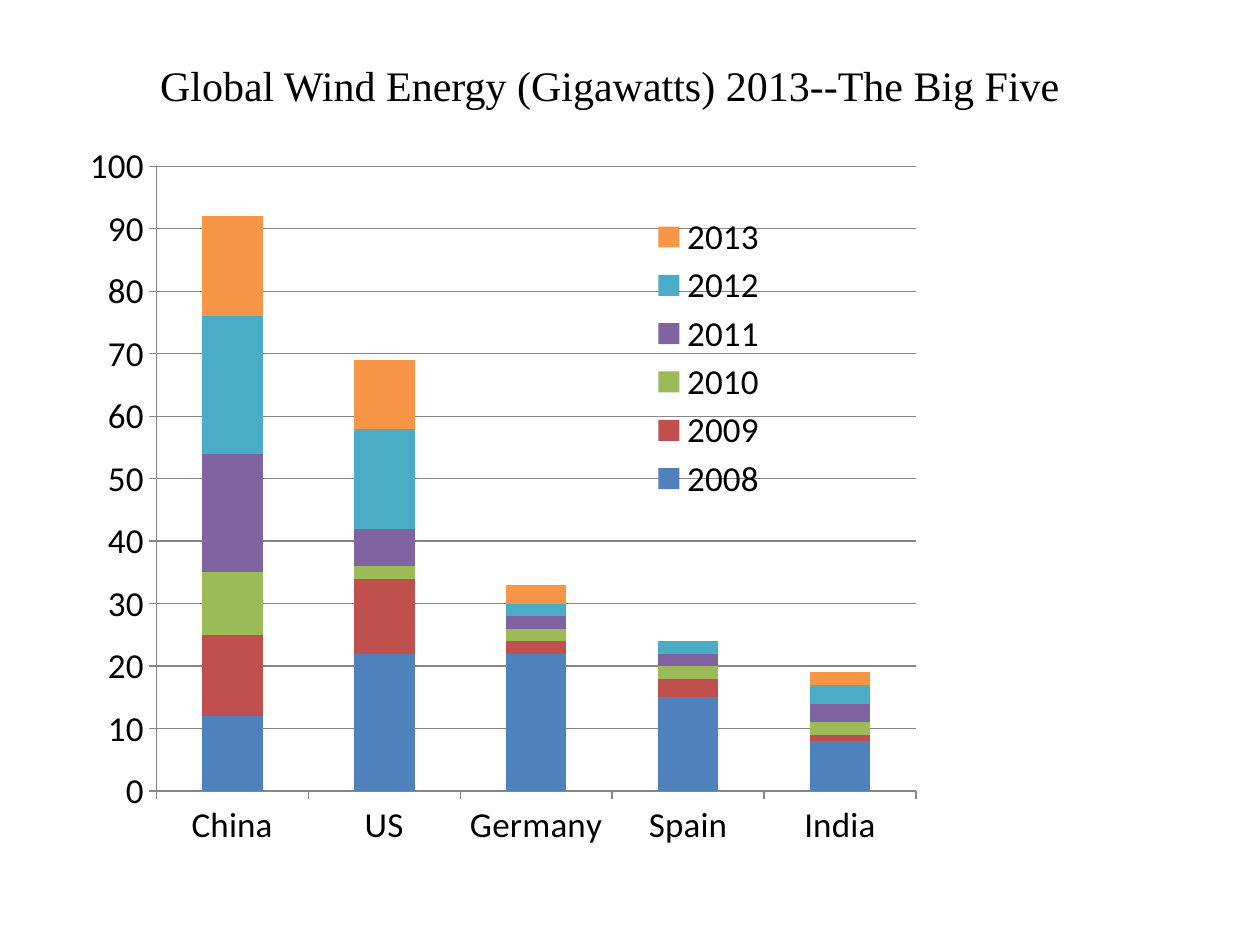
from pptx import Presentation
from pptx.chart.data import CategoryChartData
from pptx.dml.color import RGBColor
from pptx.enum.chart import XL_CHART_TYPE as ChartType, XL_LEGEND_POSITION as LegendPos, XL_TICK_MARK as Tick
from pptx.enum.text import MSO_ANCHOR as Anchor, PP_ALIGN as Align
from pptx.oxml import parse_xml
from pptx.oxml.ns import nsdecls, qn
from pptx.util import Inches, Pt

CHART_W, CHART_H = 7.92, 5.75
COUNTRIES = ["China", "US", "Germany", "Spain", "India"]
YEARS = [
    ("2008", [12, 22, 22, 15, 8], "4F81BD"),
    ("2009", [13, 12, 2, 3, 1], "C0504D"),
    ("2010", [10, 2, 2, 2, 2], "9BBB59"),
    ("2011", [19, 6, 2, 2, 3], "8064A2"),
    ("2012", [22, 16, 2, 2, 3], "4BACC6"),
    ("2013", [16, 11, 3, 0, 2], "F79646"),
]


def rgb(value):
    """Turn a hex string into a colour."""
    return RGBColor.from_string(value)


def layout_xml(x, y, w, h, inner=False):
    """Make a manual layout from inches within the chart area."""
    target = '<c:layoutTarget val="inner"/>' if inner else ""
    fractions = (x / CHART_W, y / CHART_H, w / CHART_W, h / CHART_H)
    sizes = "".join(f'<c:{k} val="{v:.4f}"/>' for k, v in zip("xywh", fractions))
    return parse_xml(
        f'<c:layout {nsdecls("c")}><c:manualLayout>{target}<c:xMode val="edge"/>'
        f'<c:yMode val="edge"/>{sizes}</c:manualLayout></c:layout>')


def add_title(s, text):
    """Fill and place the slide title."""
    sp = s.shapes.title
    sp.left, sp.top, sp.width, sp.height = map(Inches, (1.17, 0.42, 8.08, 0.5))
    tf = sp.text_frame
    tf.word_wrap = True
    tf.vertical_anchor = Anchor.TOP
    p = tf.paragraphs[0]
    p.text = text
    p.alignment = Align.LEFT
    p.font.name = "Times New Roman"
    p.font.size = Pt(24)
    p.font.color.rgb = rgb("000000")


def style_line(line):
    """Make a chart line thin and grey."""
    line.color.rgb = rgb("868686")
    line.width = Pt(0.75)


def style_axis(axis):
    """Give an axis its line and outer ticks."""
    axis.major_tick_mark = Tick.OUTSIDE
    axis.minor_tick_mark = Tick.NONE
    style_line(axis.format.line)


def add_energy_chart(s):
    """Add the stacked columns of wind energy by country."""
    data = CategoryChartData()
    data.categories = COUNTRIES
    for year, values, _ in YEARS:
        data.add_series(year, values)
    chart = s.shapes.add_chart(
        ChartType.COLUMN_STACKED, Inches(0.08), Inches(1.08), Inches(CHART_W), Inches(CHART_H), data).chart
    chart.has_title = False
    chart.font.name = "Calibri"
    chart.font.size = Pt(20)
    chart.font.color.rgb = rgb("000000")

    plot = chart.plots[0]
    plot.gap_width, plot.overlap, plot.vary_by_categories = 150, 100, False
    for series, (_, _, color) in zip(plot.series, YEARS):
        series.format.fill.solid()
        series.format.fill.fore_color.rgb = rgb(color)

    style_axis(chart.category_axis)
    axis = chart.value_axis
    style_axis(axis)
    axis.minimum_scale, axis.maximum_scale, axis.major_unit = 0, 100, 10
    axis.has_major_gridlines = True
    style_line(axis.major_gridlines.format.line)

    chart.has_legend = True
    legend = chart.legend
    legend.position = LegendPos.RIGHT
    legend.include_in_layout = False
    root = chart.element
    for old in root.findall(".//" + qn("c:layout")):
        old.getparent().remove(old)
    root.find(".//" + qn("c:plotArea")).insert(0, layout_xml(1.16, 0.24, 6.03, 4.96, inner=True))
    root.find(".//" + qn("c:legendPos")).addnext(layout_xml(5.03, 0.59, 1.03, 2.34))


def main():
    """Build and save the slide."""
    prs = Presentation()
    prs.slide_width, prs.slide_height = Inches(10), Inches(7.5)
    s = prs.slides.add_slide(prs.slide_layouts[5])
    add_energy_chart(s)
    add_title(s, "Global Wind Energy (Gigawatts) 2013--The Big Five")
    prs.save("out.pptx")


if __name__ == "__main__":
    main()
